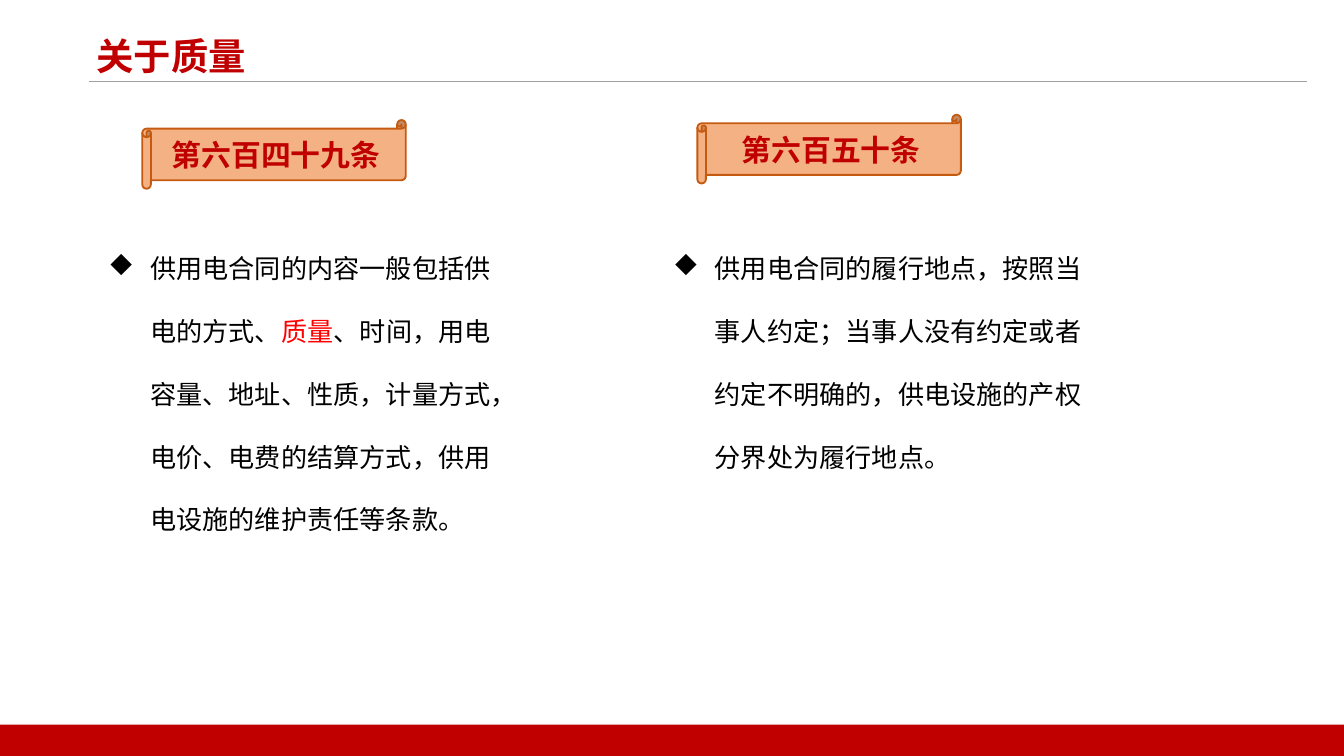
import pptx
import pptx.dml.color
import pptx.enum.dml
import pptx.enum.lang
import pptx.enum.shapes
import pptx.enum.text
import pptx.oxml.ns
import pptx.util
from lxml import etree
from pptx.util import Cm

FONT = "Noto Sans CJK SC"
COLORS = {
    "background": "FFFFFF",
    "red": "C00000",
    "highlight": "FF0000",
    "text": "000000",
    "scroll": "F4B183",
    "scroll_edge": "C55A11",
    "rule": "A0A0A0",
}


def rgb(name):
    return pptx.dml.color.RGBColor.from_string(COLORS[name])


def add_element(parent, tag, **attributes):
    return etree.SubElement(parent, pptx.oxml.ns.qn(tag), **attributes)


class SlideBuilder:
    def __init__(self, slide):
        self.slide = slide
        slide.background.fill.solid()
        slide.background.fill.fore_color.rgb = rgb("background")

    def style_run(self, run, size, color, bold=False):
        font = run.font
        font.size = pptx.util.Pt(size)
        font.bold = bold
        font.name = FONT
        font.language_id = pptx.enum.lang.MSO_LANGUAGE_ID.SIMPLIFIED_CHINESE
        font.color.rgb = rgb(color)
        add_element(font._element, "a:ea", typeface=FONT)

    def add_text_box(self, left, top, width, height):
        box = self.slide.shapes.add_textbox(Cm(left), Cm(top), Cm(width), Cm(height))
        box.text_frame.word_wrap = True
        return box

    def add_title(self, text):
        box = self.add_text_box(1.57, 0.51, 8.26, 1.3)
        box.text_frame.text = text
        self.style_run(box.text_frame.paragraphs[0].runs[0], 20, "red", bold=True)

    def add_rule(self, left, right, top):
        line = self.slide.shapes.add_connector(
            pptx.enum.shapes.MSO_CONNECTOR.STRAIGHT, Cm(left), Cm(top), Cm(right), Cm(top))
        line.line.color.rgb = rgb("rule")
        line.line.width = pptx.util.Pt(0.5)
        add_element(line._element.spPr, "a:effectLst")

    def add_shape(self, kind, left, top, width, height, fill):
        shape = self.slide.shapes.add_shape(kind, Cm(left), Cm(top), Cm(width), Cm(height))
        shape.shadow.inherit = False
        shape.fill.solid()
        shape.fill.fore_color.rgb = rgb(fill)
        shape.line.fill.background()
        return shape

    def add_footer_bar(self):
        self.add_shape(pptx.enum.shapes.MSO_SHAPE.RECTANGLE, 0, 13.7, 25.4, 0.59, "red")

    def add_scroll(self, left, top, text):
        scroll = self.add_shape(
            pptx.enum.shapes.MSO_SHAPE.HORIZONTAL_SCROLL, left, top, 4.98, 1.3, "scroll")
        scroll.line.color.rgb = rgb("scroll_edge")
        scroll.line.width = pptx.util.Pt(1)
        frame = scroll.text_frame
        frame.text = text
        frame.vertical_anchor = pptx.enum.text.MSO_ANCHOR.MIDDLE
        para = frame.paragraphs[0]
        para.alignment = pptx.enum.text.PP_ALIGN.CENTER
        self.style_run(para.runs[0], 16, "red", bold=True)

    def add_clause(self, left, width, height, spans):
        """Add one bulleted paragraph made of (text, colour name) spans."""
        box = self.add_text_box(left, 4.06, width, height)
        box.text_frame.auto_size = pptx.enum.text.MSO_AUTO_SIZE.SHAPE_TO_FIT_TEXT
        para = box.text_frame.paragraphs[0]
        para.line_spacing = 2.0
        properties = para._p.get_or_add_pPr()
        properties.set("marL", str(Cm(0.79)))
        properties.set("indent", str(-Cm(0.79)))
        # The letter u is a black diamond in Wingdings.
        add_element(properties, "a:buFont", typeface="Wingdings", charset="2")
        add_element(properties, "a:buChar", char="u")
        for text, color in spans:
            span = para.add_run()
            span.text = text
            self.style_run(span, 14, color)


def main():
    deck = pptx.Presentation()
    deck.slide_width, deck.slide_height = Cm(25.4), Cm(14.29)
    page = SlideBuilder(deck.slides.add_slide(deck.slide_layouts[6]))

    page.add_rule(1.68, 24.71, 1.54)
    page.add_title("关于质量")
    page.add_footer_bar()

    page.add_scroll(2.69, 2.27, "第六百四十九条")
    page.add_clause(1.8, 8.03, 6.02, [
        ("供用电合同的内容一般包括供电的方式、", "text"),
        ("质量", "highlight"),
        ("、时间，用电容量、地址、性质，计量方式，电价、电费的结算方式，"
         "供用电设施的维护责任等条款。", "text"),
    ])

    page.add_scroll(13.18, 2.17, "第六百五十条")
    page.add_clause(12.47, 8.56, 4.83, [
        ("供用电合同的履行地点，按照当事人约定；当事人没有约定或者约定不明确的，"
         "供电设施的产权分界处为履行地点。", "text"),
    ])

    deck.save("out.pptx")


if __name__ == "__main__":
    main()
